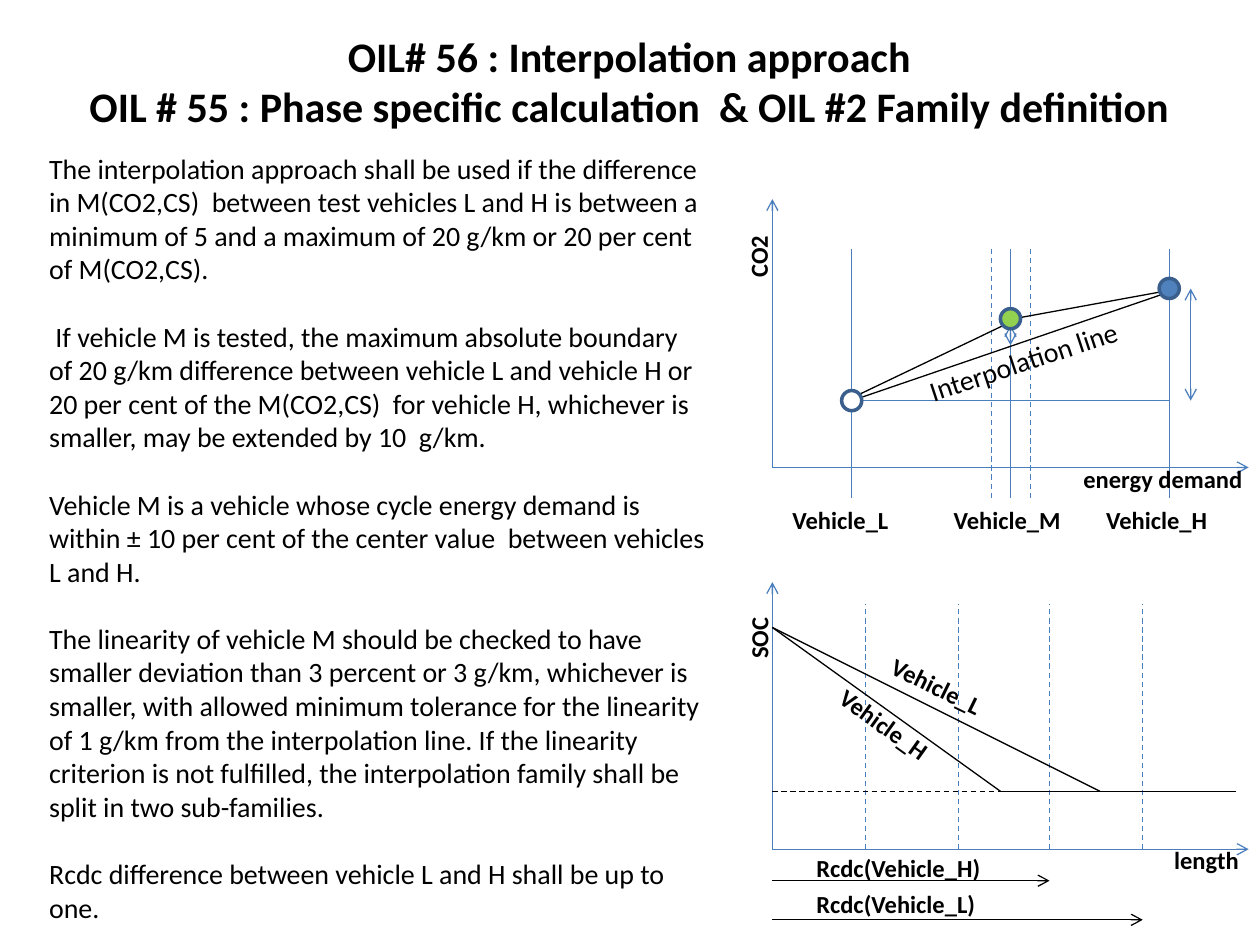
import pptx
import pptx.util
import pptx.dml.color
import pptx.enum.dml
import pptx.enum.shapes
import pptx.enum.text
import pptx.oxml.ns
from lxml import etree

Inches, Pt = pptx.util.Inches, pptx.util.Pt
ALIGN = pptx.enum.text.PP_ALIGN
ANCHOR = pptx.enum.text.MSO_ANCHOR

COLORS = {"text": "000000", "blue": "4B7EBC", "edge": "3A5F8C",
          "low": "FFFFFF", "mid": "92D050", "high": "4F81BD"}

TITLE = ["OIL# 56 : Interpolation approach",
         "OIL # 55 : Phase specific calculation  & OIL #2 Family definition"]
BODY = [
    "The interpolation approach shall be used if the difference in M(CO2,CS)  between "
    "test vehicles L and H is between a minimum of 5 and a maximum of 20 g/km or "
    "20 per cent of M(CO2,CS).",
    " If vehicle M is tested, the maximum absolute boundary of 20 g/km difference between "
    "vehicle L and vehicle H or 20 per cent of the M(CO2,CS)  for vehicle H, whichever is "
    "smaller, may be extended by 10  g/km.",
    "Vehicle M is a vehicle whose cycle energy demand is within ± 10 per cent of the center "
    "value  between vehicles L and H.",
    "The linearity of vehicle M should be checked to have smaller deviation than 3 percent "
    "or 3 g/km, whichever is smaller, with allowed minimum tolerance for the linearity of "
    "1 g/km from the interpolation line. If the linearity criterion is not fulfilled, the "
    "interpolation family shall be split in two sub-families.",
    "Rcdc difference between vehicle L and H shall be up to one.",
]

# Chart geometry
AXIS_X, AXIS_END = 6.13, 9.91
CO2_BASE, CO2_TOP = 3.71, 1.58
SOC_BASE, SOC_TOP = 6.74, 4.62
X_L, X_M, X_H = 6.76, 8.02, 9.28
Y_L, Y_M, Y_H = 3.18, 2.53, 2.29
SOC_START, SOC_MIN = 4.98, 6.28
CYCLES = [6.87, 7.61, 8.33, 9.07]
MARKER = 0.16

# x1, y1, x2, y2, colour, style words
LINES = [(AXIS_X, base, x, y, "blue", "tail")
         for base, top in ((CO2_BASE, CO2_TOP), (SOC_BASE, SOC_TOP))
         for x, y in ((AXIS_X, top), (AXIS_END, base))]
LINES += [(x, 3.95, x, 1.98, "blue", "") for x in (X_L, X_M, X_H)]
LINES += [(x, 3.95, x, 1.98, "blue", "dash") for x in (7.87, 8.18)]
LINES += [(x, SOC_BASE, x, 4.79, "blue", "dash") for x in CYCLES]
LINES += [
    # CO2 chart
    (9.36, Y_H, X_L, Y_L, "text", ""),
    (8.1, 2.52, 9.36, Y_H, "text", ""),
    (6.82, 3.13, 7.97, 2.58, "text", ""),
    (6.84, Y_L, X_H, Y_L, "blue", ""),
    (9.45, Y_H, 9.45, Y_L, "blue", "head tail"),
    (X_M, 2.58, X_M, 2.74, "blue", "head tail"),
    # SOC chart
    (AXIS_X, SOC_START, 8.73, SOC_MIN, "text", ""),
    (AXIS_X, SOC_START, 7.94, SOC_MIN, "text", ""),
    (7.94, SOC_MIN, 9.81, SOC_MIN, "text", ""),
    (AXIS_X, SOC_MIN, 8, SOC_MIN, "text", "dash"),
    (AXIS_X, 6.99, CYCLES[2], 6.99, "text", "tail"),
    (AXIS_X, 7.3, CYCLES[3], 7.3, "text", "tail"),
]
MARKERS = [(X_L, Y_L, "low"), (X_H, Y_H, "high"), (X_M, Y_M, "mid")]

# text, left, top, width, rotation
LABELS = [
    ("CO2", 5.75, 1.86, 0.54, 270),
    ("energy demand", 8.5, 3.63, 1.47, 0),
    ("Vehicle_L", 6.19, 3.96, 1.01, 0),
    ("Vehicle_M", 7.47, 3.96, 1.1, 0),
    ("Vehicle_H", 8.68, 3.96, 1.06, 0),
    ("SOC", 5.76, 4.89, 0.53, 270),
    ("length", 9.22, 6.66, 0.72, 0),
    ("Vehicle_H", 6.51, 5.6, 1.06, 35.5),
    ("Vehicle_L", 6.95, 5.29, 1.01, 26.1),
    ("Rcdc(Vehicle_H)", 6.38, 6.72, 1.52, 0),
    ("Rcdc(Vehicle_L)", 6.38, 7.01, 1.52, 0),
]


def rgb(name):
    return pptx.dml.color.RGBColor.from_string(COLORS[name])


def sub(parent, tag, **attrs):
    return etree.SubElement(parent, pptx.oxml.ns.qn(tag), attrs)


def style(p, size, bold=False, align=ALIGN.LEFT):
    p.alignment = align
    p.font.name, p.font.size, p.font.bold = "Calibri", Pt(size), bold
    p.font.color.rgb = rgb("text")


def place(sp, left, top, width, height):
    sp.left, sp.top = Inches(left), Inches(top)
    sp.width, sp.height = Inches(width), Inches(height)


def fill_placeholder(sp, paragraphs, anchor):
    tf = sp.text_frame
    tf.text = "\n".join(paragraphs)
    tf.word_wrap = True
    tf.auto_size = pptx.enum.text.MSO_AUTO_SIZE.NONE
    tf.vertical_anchor = anchor
    return tf.paragraphs


def add_line(x1, y1, x2, y2, color, look):
    ln = slide.shapes.add_connector(pptx.enum.shapes.MSO_CONNECTOR.STRAIGHT,
                                    Inches(x1), Inches(y1), Inches(x2), Inches(y2))
    ln.line.color.rgb, ln.line.width = rgb(color), Pt(0.75)
    if "dash" in look:
        ln.line.dash_style = pptx.enum.dml.MSO_LINE.DASH
    for end in ("head", "tail"):
        if end in look:
            sub(ln.line._get_or_add_ln(), f"a:{end}End", type="arrow")
    sub(ln._element.spPr, "a:effectLst")


def add_label(text, left, top, width, height, rotation, size, bold, wrap, align):
    sp = slide.shapes.add_textbox(Inches(left), Inches(top), Inches(width), Inches(height))
    sp.rotation = rotation
    tf = sp.text_frame
    tf.word_wrap = wrap
    tf.text = text
    style(tf.paragraphs[0], size, bold, align)


prs = pptx.Presentation()
prs.slide_width, prs.slide_height = Inches(10), Inches(7.5)
slide = prs.slides.add_slide(prs.slide_layouts[1])

# Title and body text
title, body = slide.shapes.title, slide.placeholders[1]
place(title, 0.42, 0.19, 9.15, 0.91)
for p in fill_placeholder(title, TITLE, ANCHOR.TOP):
    style(p, 24, True, ALIGN.CENTER)

place(body, 0.29, 1.15, 5.42, 6.29)
for i, p in enumerate(fill_placeholder(body, BODY, ANCHOR.TOP)):
    p.space_before = Pt(19.2 if i else 0)
    pPr = p._p.get_or_add_pPr()
    pPr.set("marL", "0")
    pPr.set("indent", "0")
    sub(pPr, "a:buNone")
    style(p, 16)

# Both charts: lines, vehicle markers, labels
for line in LINES:
    add_line(*line)

for x, y, color in MARKERS:
    sp = slide.shapes.add_shape(pptx.enum.shapes.MSO_SHAPE.OVAL,
                                Inches(x - MARKER / 2), Inches(y - MARKER / 2),
                                Inches(MARKER), Inches(MARKER))
    sp.shadow.inherit = False
    sp.fill.solid()
    sp.fill.fore_color.rgb = rgb(color)
    sp.line.color.rgb, sp.line.width = rgb("edge"), Pt(2)

add_label("Interpolation line", 6.86, 2.68, 2.52, 0.37, 341.6, 16, False, True, ALIGN.CENTER)
for text, left, top, width, rotation in LABELS:
    add_label(text, left, top, width, 0.34, rotation, 14, True, False, ALIGN.LEFT)

prs.save("out.pptx")
